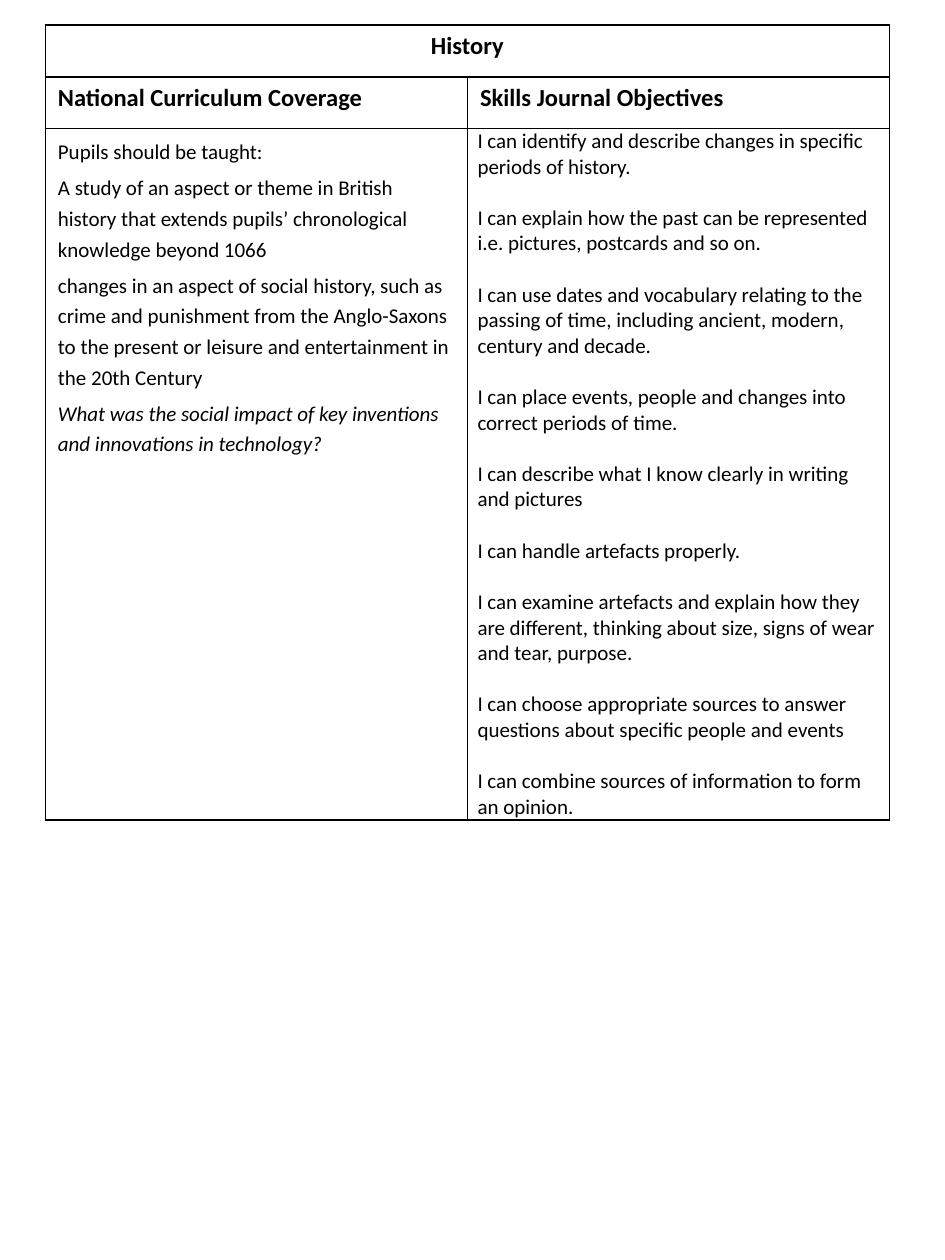
import pptx
import pptx.util
import pptx.dml.color
import pptx.enum.text
from lxml import etree
import pptx.oxml.ns

Inches = pptx.util.Inches
Pt = pptx.util.Pt

CURRICULUM = [
    "Pupils should be taught:",
    "A study of an aspect or theme in British history that extends pupils’ "
    "chronological knowledge beyond 1066",
    "changes in an aspect of social history, such as crime and punishment from the "
    "Anglo-Saxons to the present or leisure and entertainment in the 20th Century",
    "What was the social impact of key inventions and innovations in technology?",
]
OBJECTIVES = [
    "I can identify and describe changes in specific periods of history.",
    "I can explain how the past can be represented i.e. pictures, postcards and so on.",
    "I can use dates and vocabulary relating to the passing of time, including "
    "ancient, modern, century and decade.",
    "I can place events, people and changes into correct periods of time.",
    "I can describe what I know clearly in writing and pictures",
    "I can handle artefacts properly.",
    "I can examine artefacts and explain how they are different, thinking about "
    "size, signs of wear and tear, purpose.",
    "I can choose appropriate sources to answer questions about specific people and events",
    "I can combine sources of information to form an opinion.",
]


class CurriculumSlide:
    FONT = "Calibri"
    COLORS = {"text": "000000", "border": "000000"}
    HEADING_SIZE, BODY_SIZE = 14, 12

    def __init__(self, slide):
        self.slide = slide

    def table(self, left, top, column_widths, row_heights):
        """Add a plain table with every cell bordered."""
        table = self.slide.shapes.add_table(
            len(row_heights), len(column_widths), Inches(left), Inches(top),
            Inches(sum(column_widths)), Inches(sum(row_heights))).table
        table.first_row = table.horz_banding = False
        for column, width in zip(table.columns, column_widths):
            column.width = Inches(width)
        for row, height in zip(table.rows, row_heights):
            row.height = Inches(height)
        for cell in table.iter_cells():
            self.border(cell)
            cell.fill.background()
        return table

    def border(self, cell):
        qn = pptx.oxml.ns.qn
        properties = cell._tc.get_or_add_tcPr()
        for side in ("lnL", "lnR", "lnT", "lnB"):
            line = etree.SubElement(properties, qn("a:" + side), w=str(Pt(1)))
            fill = etree.SubElement(line, qn("a:solidFill"))
            etree.SubElement(fill, qn("a:srgbClr"), val=self.COLORS["border"])

    def fill_text(self, cell, paragraphs, size, bold=False):
        cell.text_frame.text = "\n".join(paragraphs)
        for paragraph in cell.text_frame.paragraphs:
            for run in paragraph.runs:
                run.font.name = self.FONT
                run.font.size = Pt(size)
                run.font.bold = bold
                run.font.color.rgb = pptx.dml.color.RGBColor.from_string(self.COLORS["text"])
        return cell.text_frame.paragraphs

    def heading(self, cell, text):
        return self.fill_text(cell, [text], self.HEADING_SIZE, bold=True)[0]

    def body(self, cell, paragraphs):
        return self.fill_text(cell, paragraphs, self.BODY_SIZE)


def main():
    presentation = pptx.Presentation()
    presentation.slide_width, presentation.slide_height = Inches(7.5), Inches(10)
    page = CurriculumSlide(presentation.slides.add_slide(presentation.slide_layouts[6]))

    table = page.table(0.36, 0.2, [3.35, 3.35], [0.41, 0.41, 5.47])
    subject = table.cell(0, 0)
    subject.merge(table.cell(0, 1))
    page.heading(subject, "History").alignment = pptx.enum.text.PP_ALIGN.CENTER
    page.heading(table.cell(1, 0), "National Curriculum Coverage")
    page.heading(table.cell(1, 1), "Skills Journal Objectives")

    coverage = page.body(table.cell(2, 0), CURRICULUM)
    for paragraph in coverage:
        paragraph.line_spacing = 1.2
        paragraph.space_after = Pt(3)
    coverage[-1].runs[0].font.italic = True

    objectives_cell = table.cell(2, 1)
    objectives_cell.margin_left = objectives_cell.margin_right = Inches(0.08)
    objectives_cell.margin_top = objectives_cell.margin_bottom = 0
    for paragraph in page.body(objectives_cell, OBJECTIVES)[1:]:
        paragraph.space_before = Pt(14.65)

    presentation.save("out.pptx")


if __name__ == "__main__":
    main()
